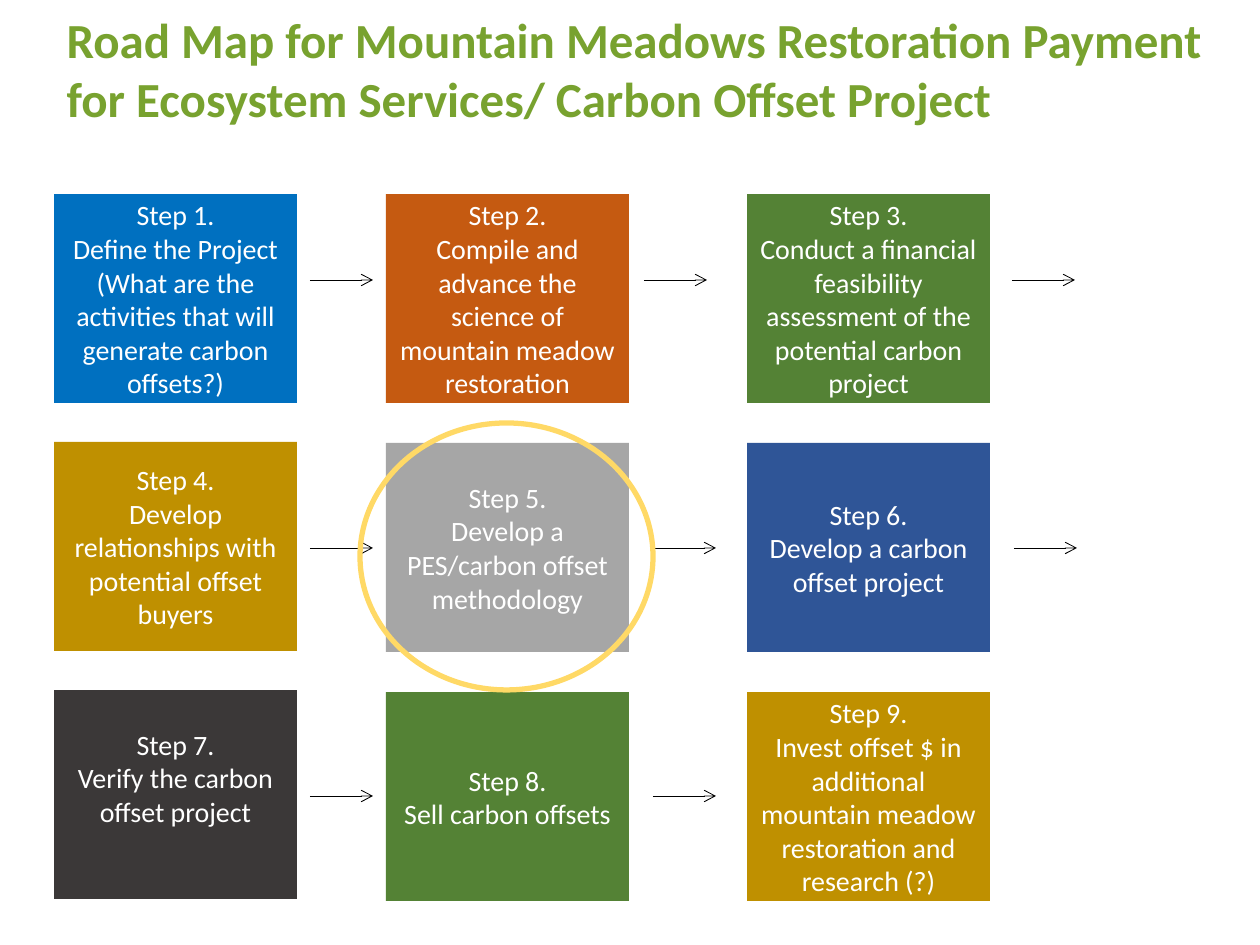
from typing import NamedTuple

from lxml import etree
from pptx import Presentation
from pptx.dml.color import RGBColor
from pptx.enum.shapes import MSO_CONNECTOR, MSO_SHAPE
from pptx.enum.text import MSO_ANCHOR, MSO_AUTO_SIZE, PP_ALIGN
from pptx.oxml.ns import qn
from pptx.util import Emu, Pt

RECT, OVAL = MSO_SHAPE.RECTANGLE, MSO_SHAPE.OVAL
STRAIGHT = MSO_CONNECTOR.STRAIGHT
TOP, MIDDLE = MSO_ANCHOR.TOP, MSO_ANCHOR.MIDDLE
LEFT, CENTER = PP_ALIGN.LEFT, PP_ALIGN.CENTER

PX_PER_INCH = 126
FONT = "Calibri"
BOX_W, BOX_H = 243, 209
FIRST_ROW_Y = 194
ARROW_LENGTH = 63


class Column(NamedTuple):
    x: int
    row_pitch: int


class Step(NamedTuple):
    text: str
    fill: str
    bottom_inset: int = 6


class ArrowRow(NamedTuple):
    y: int
    starts: tuple[int, ...]


COLUMNS = [Column(54, 248), Column(386, 249), Column(747, 249)]
STEPS = [
    Step("Define the Project (What are the activities that will generate carbon offsets?)", "0070C0"),
    Step("Compile and advance the science of mountain meadow restoration", "C55A11"),
    Step("Conduct a financial feasibility assessment of the potential carbon project", "548235"),
    Step("Develop relationships with potential offset buyers", "BF9000"),
    Step("Develop a PES/carbon offset methodology", "A6A6A6"),
    Step("Develop a carbon offset project", "2F5597"),
    Step("Verify the carbon offset project", "3B3838", bottom_inset=40),
    Step("Sell carbon offsets", "548235"),
    Step("Invest offset $ in additional mountain meadow restoration and research (?)", "BF9000"),
]
ARROWS = [
    ArrowRow(280, (310, 644, 1012)),
    ArrowRow(548, (310, 653, 1014)),
    ArrowRow(796, (310, 653)),
]


def px(n: int) -> Emu:
    return Emu(round(n * 914400 / PX_PER_INCH))


def color(value: str) -> RGBColor:
    return RGBColor.from_string(value)


def set_font(p, size: int, value: str, bold: bool = False) -> None:
    p.font.name = FONT
    p.font.size = Pt(size)
    p.font.bold = bold
    p.font.color.rgb = color(value)


def add_title(slide, text: str) -> None:
    s = slide.shapes.title
    s.left, s.top, s.width, s.height = px(54), px(3), px(1191), px(131)
    tf = s.text_frame
    tf.text = text
    tf.auto_size = MSO_AUTO_SIZE.NONE
    tf.vertical_anchor = TOP
    p = tf.paragraphs[0]
    p.alignment = LEFT
    set_font(p, 28, "78A22F", bold=True)


def add_step(slide, number: int, step: Step) -> None:
    row, col = divmod(number - 1, len(COLUMNS))
    column = COLUMNS[col]
    y = FIRST_ROW_Y + row * column.row_pitch
    s = slide.shapes.add_shape(RECT, px(column.x), px(y), px(BOX_W), px(BOX_H))
    s.shadow.inherit = False
    s.fill.solid()
    s.fill.fore_color.rgb = color(step.fill)
    s.line.fill.background()
    tf = s.text_frame
    tf.word_wrap = True
    tf.vertical_anchor = MIDDLE
    tf.margin_bottom = px(step.bottom_inset)
    tf.text = f"Step {number}.\n{step.text}"
    for p in tf.paragraphs:
        p.alignment = CENTER
        set_font(p, 16, "FFFFFF")


def add_arrow(slide, x: int, y: int) -> None:
    s = slide.shapes.add_connector(STRAIGHT, px(x), px(y), px(x + ARROW_LENGTH), px(y))
    s.line.color.rgb = color("000000")
    s.line.width = Pt(0.5)
    etree.SubElement(s.line._get_or_add_ln(), qn("a:tailEnd"), type="arrow")
    etree.SubElement(s._element.spPr, qn("a:effectLst"))


def add_highlight(slide) -> None:
    s = slide.shapes.add_shape(OVAL, px(360), px(423), px(293), px(267))
    s.shadow.inherit = False
    s.fill.background()
    s.line.color.rgb = color("FFD966")
    s.line.width = Pt(3)


def main() -> None:
    prs = Presentation()
    prs.slide_width, prs.slide_height = px(1260), px(945)
    slide = prs.slides.add_slide(prs.slide_layouts[5])

    add_title(slide, "Road Map for Mountain Meadows Restoration Payment "
                     "for Ecosystem Services/ Carbon Offset Project")

    # Grid of steps
    for number, step in enumerate(STEPS, start=1):
        add_step(slide, number, step)

    # Arrows between steps
    for row in ARROWS:
        for x in row.starts:
            add_arrow(slide, x, row.y)

    # Ring around the current step
    add_highlight(slide)
    prs.save("out.pptx")


if __name__ == "__main__":
    main()
